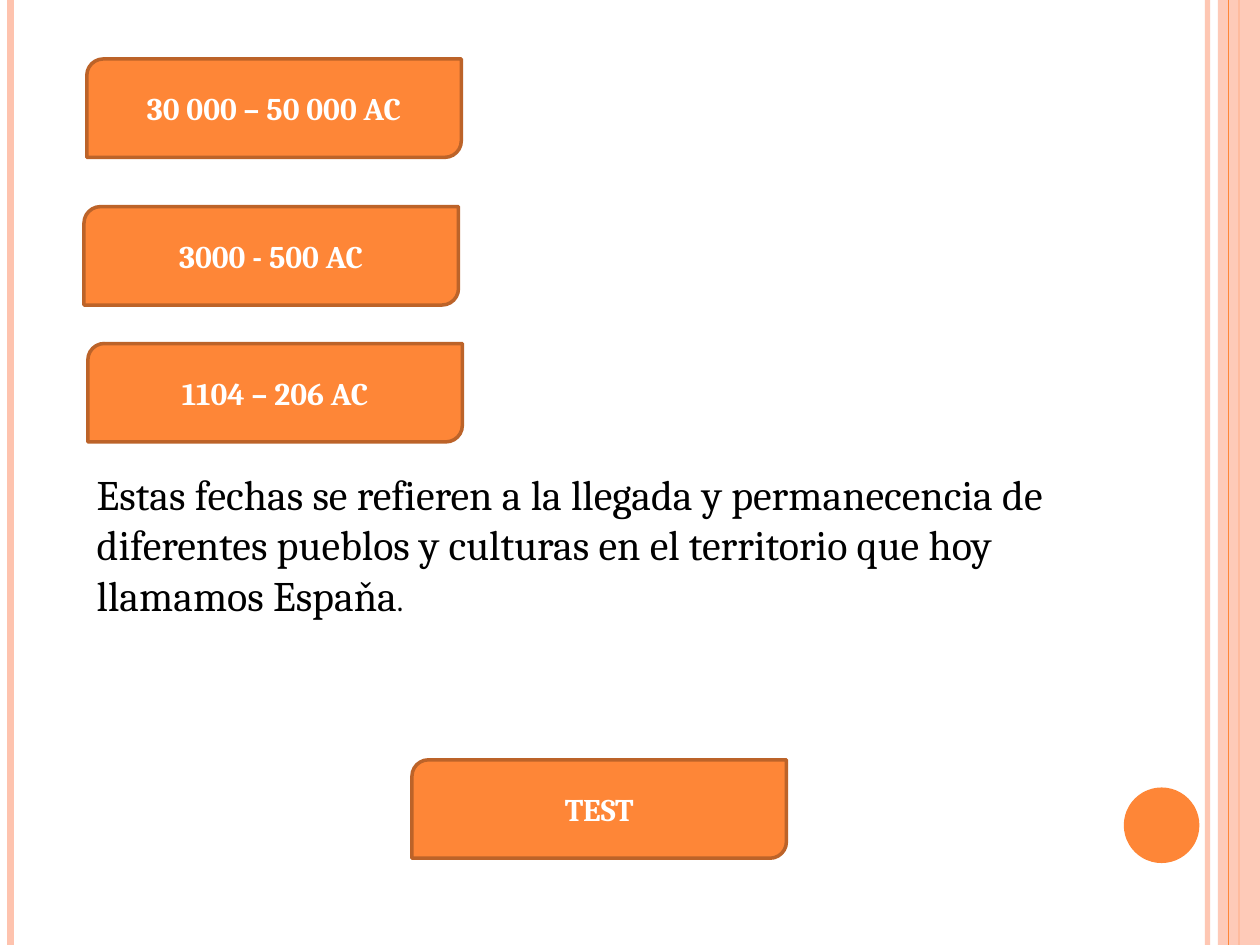
from lxml.etree import SubElement
from pptx import Presentation
from pptx.dml.color import RGBColor
from pptx.enum.shapes import MSO_CONNECTOR, MSO_SHAPE
from pptx.enum.text import MSO_ANCHOR, MSO_AUTO_SIZE, PP_ALIGN
from pptx.oxml.ns import qn
from pptx.util import Pt

ORANGE, PEACH, BROWN = "FE8637", "FEC3AE", "BC6329"


def color(value):
    return RGBColor.from_string(value)


def set_alpha(element, percent):
    tint = next(element.iter(qn("a:srgbClr")))
    SubElement(tint, qn("a:alpha")).set("val", str(percent * 1000))


deck = Presentation()
deck.slide_width, deck.slide_height = Pt(720), Pt(540)
page = deck.slides.add_slide(deck.slide_layouts[6])

stripes = [(690, PEACH, 3, 93), (6, PEACH, 4.5, 100), (708, ORANGE, 1.5, 100),
           ("band", PEACH, 24, 87), (702, ORANGE, 0.75, 100)]
for x, tone, width, opacity in stripes:
    if x == "band":
        stripe = page.shapes.add_shape(MSO_SHAPE.RECTANGLE, Pt(696), 0, Pt(width), Pt(540))
        stripe.shadow.inherit = False
        stripe.fill.solid()
        stripe.fill.fore_color.rgb = color(tone)
        stripe.line.fill.background()
    else:
        stripe = page.shapes.add_connector(MSO_CONNECTOR.STRAIGHT, Pt(x), 0, Pt(x), Pt(540))
        stripe.line.color.rgb = color(tone)
        stripe.line.width = Pt(width)
        SubElement(stripe._element.spPr, qn("a:effectLst"))
    if opacity < 100:
        set_alpha(stripe._element.spPr, opacity)

dot = page.shapes.add_shape(MSO_SHAPE.OVAL, Pt(642.2), Pt(450), Pt(43.2), Pt(43.2))
dot.shadow.inherit = False
dot.fill.solid()
dot.fill.fore_color.rgb = color(ORANGE)
dot.line.fill.background()

button_font = {"name": "Cambria", "size": Pt(18), "bold": True}
buttons = [("30 000 – 50 000 AC", 49.6, 33.7), ("3000 - 500 AC", 48, 118.1),
           ("1104 – 206 AC", 50.2, 196.3), ("TEST", 235.4, 434.2)]
for label, left, top in buttons:
    button = page.shapes.add_shape(
        MSO_SHAPE.ROUND_2_DIAG_RECTANGLE, Pt(left), Pt(top), Pt(214), Pt(56.2))
    button.shadow.inherit = False
    button.fill.solid()
    button.fill.fore_color.rgb = color(ORANGE)
    button.line.color.rgb = color(BROWN)
    button.line.width = Pt(2)
    button.text_frame.vertical_anchor = MSO_ANCHOR.MIDDLE
    para = button.text_frame.paragraphs[0]
    para.alignment = PP_ALIGN.CENTER
    span = para.add_run()
    span.text = label
    span.font.color.rgb = color("FFFFFF")
    for key, value in button_font.items():
        setattr(span.font, key, value)

box = page.shapes.add_textbox(Pt(48.2), Pt(264.2), Pt(623.5), Pt(94.3))
frame_format = {"word_wrap": True, "auto_size": MSO_AUTO_SIZE.SHAPE_TO_FIT_TEXT}
for key, value in frame_format.items():
    setattr(box.text_frame, key, value)
para = box.text_frame.paragraphs[0]
sentence = ("Estas fechas se refieren a la llegada y permanecencia de diferentes "
            "pueblos y culturas en el territorio que hoy llamamos Espaňa")
for words, size in [(sentence, 24), (".", 18)]:
    span = para.add_run()
    span.text = words
    span.font.color.rgb = color("000000")
    for key, value in {"name": "Cambria", "size": Pt(size)}.items():
        setattr(span.font, key, value)

deck.save("out.pptx")
